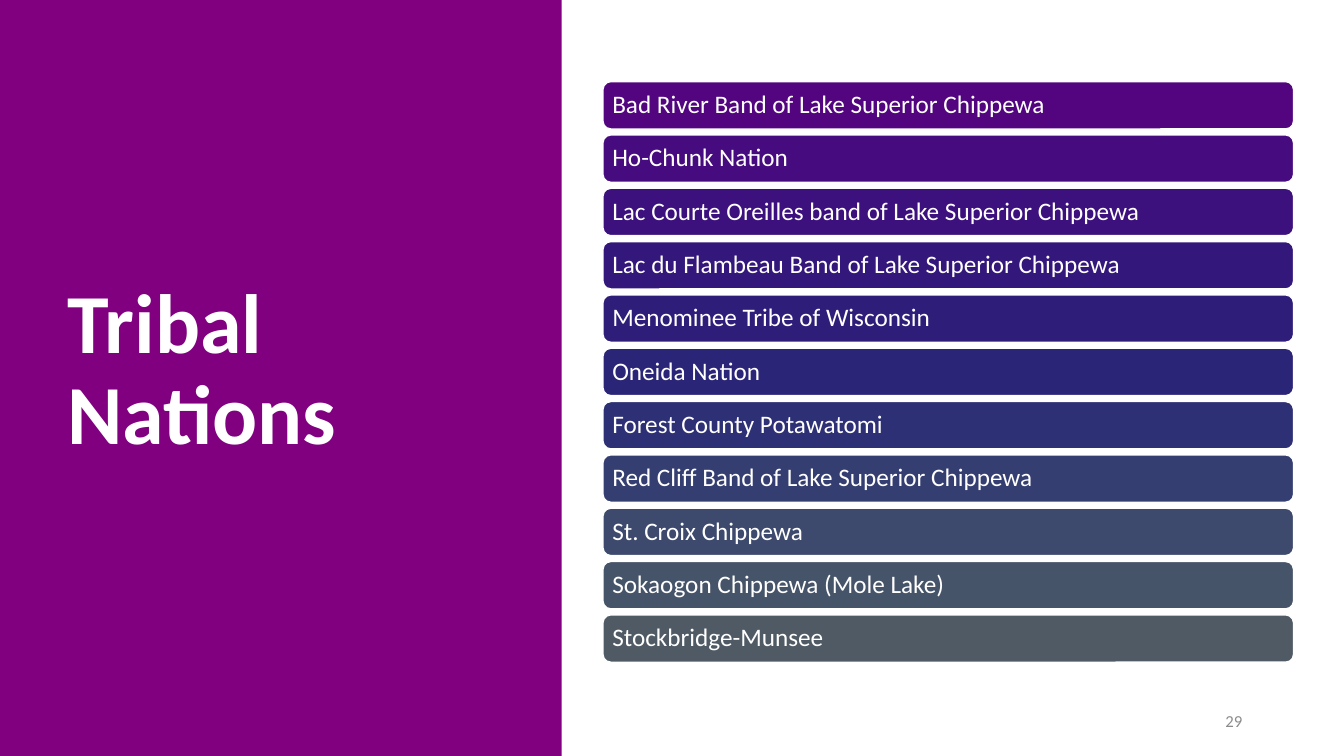
from dataclasses import dataclass

from pptx import Presentation
from pptx.dml.color import RGBColor
from pptx.enum.shapes import MSO_SHAPE as SHAPE
from pptx.enum.text import MSO_ANCHOR as ANCHOR, PP_ALIGN as ALIGN
from pptx.util import Inches, Pt


@dataclass(frozen=True)
class Theme:
    font: str = "Calibri"
    panel: str = "800080"
    white: str = "FFFFFF"
    muted: str = "8C8C8C"
    title_size: int = 60
    bar_size: int = 18
    number_size: int = 12


THEME = Theme()

# Each nation with the colour of its bar
NATIONS = [
    ("Bad River Band of Lake Superior Chippewa", "52057F"),
    ("Ho-Chunk Nation", "460B7E"),
    ("Lac Courte Oreilles band of Lake Superior Chippewa", "3D117D"),
    ("Lac du Flambeau Band of Lake Superior Chippewa", "34177B"),
    ("Menominee Tribe of Wisconsin", "2E1E79"),
    ("Oneida Nation", "2B2577"),
    ("Forest County Potawatomi", "2D3074"),
    ("Red Cliff Band of Lake Superior Chippewa", "353E71"),
    ("St. Croix Chippewa", "3D4A6D"),
    ("Sokaogon Chippewa (Mole Lake)", "465469"),
    ("Stockbridge-Munsee", "4F5A65"),
]


def rgb(color):
    return RGBColor.from_string(color)


def add_block(slide, kind, box, fill):
    sp = slide.shapes.add_shape(kind, *map(Inches, box))
    sp.shadow.inherit = False
    sp.fill.solid()
    sp.fill.fore_color.rgb = rgb(fill)
    sp.line.fill.background()
    return sp


def write(sp, text, size, color, bold=False, align=ALIGN.LEFT, spacing=0.9):
    tf = sp.text_frame
    tf.word_wrap = True
    tf.vertical_anchor = ANCHOR.MIDDLE
    p = tf.paragraphs[0]
    p.alignment = align
    p.line_spacing = spacing
    r = p.add_run()
    r.text = text
    r.font.name = THEME.font
    r.font.size = Pt(size)
    r.font.bold = bold
    r.font.color.rgb = rgb(color)


def add_title_panel(slide, box, title):
    left, top, width, height = box
    add_block(slide, SHAPE.RECTANGLE, box, THEME.panel)
    sp = slide.shapes.add_textbox(Inches(left + 0.57), Inches(top + 0.68),
                                  Inches(width - 1.41), Inches(height - 1.48))
    write(sp, title, THEME.title_size, THEME.white, bold=True)


def add_nation_list(slide, box, nations, bar_height=0.47):
    left, top, width, height = box
    pitch = (height - bar_height) / (len(nations) - 1)
    for i, (nation, color) in enumerate(nations):
        bar_box = (left, top + i * pitch, width, bar_height)
        sp = add_block(slide, SHAPE.ROUNDED_RECTANGLE, bar_box, color)
        sp.line.color.rgb = rgb(THEME.white)
        sp.line.width = Pt(1)
        tf = sp.text_frame
        tf.margin_left = tf.margin_right = Inches(0.07)
        tf.margin_top = tf.margin_bottom = Inches(0.07)
        write(sp, nation, THEME.bar_size, THEME.white)


def add_slide_number(slide, box, number):
    sp = slide.shapes.add_textbox(*map(Inches, box))
    write(sp, number, THEME.number_size, THEME.muted, align=ALIGN.RIGHT, spacing=1.0)


def main():
    prs = Presentation()
    prs.slide_width, prs.slide_height = Inches(13.33), Inches(7.5)
    slide = prs.slides.add_slide(prs.slide_layouts[6])

    # Left panel, page number, right-hand list
    add_title_panel(slide, (0, 0, 5.57, 7.5), "Tribal Nations")
    add_slide_number(slide, (9.42, 6.95, 3, 0.4), "29")
    add_nation_list(slide, (5.98, 0.81, 6.85, 5.76), NATIONS)

    prs.save("out.pptx")


if __name__ == "__main__":
    main()
